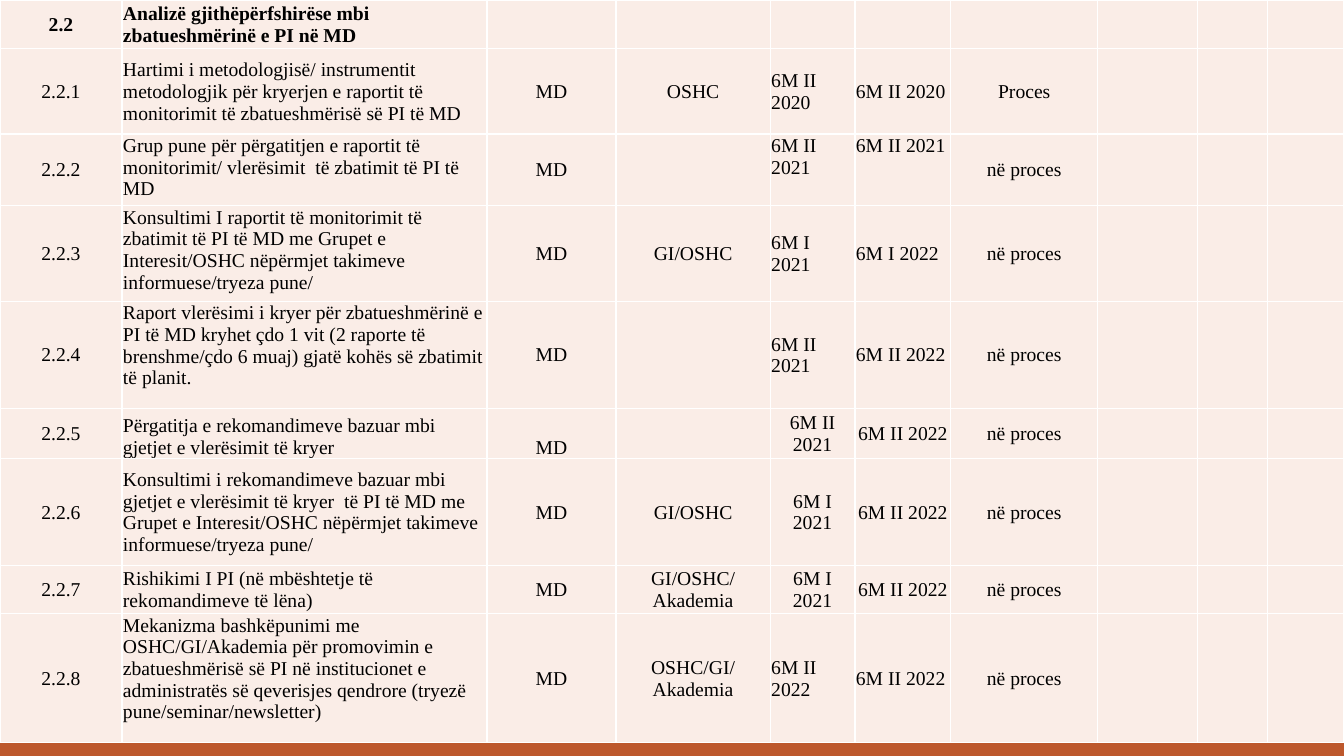
import pptx
import pptx.dml.color
import pptx.enum.shapes
import pptx.enum.text
import pptx.util
import lxml.etree

SLIDE_WIDTH, SLIDE_HEIGHT = 13.33, 7.5
COLUMN_WIDTHS = [1.21, 3.62, 1.28, 1.53, 0.84, 0.95, 1.46, 0.99, 0.69, 0.76]
ROW_HEIGHTS = [0.48, 0.85, 0.71, 0.95, 1.06, 0.5, 1.06, 0.48, 1.28]
ANCHORS = {
    "t": pptx.enum.text.MSO_ANCHOR.TOP,
    "m": pptx.enum.text.MSO_ANCHOR.MIDDLE,
    "b": pptx.enum.text.MSO_ANCHOR.BOTTOM,
}
ALIGNMENTS = {
    "l": pptx.enum.text.PP_ALIGN.LEFT,
    "c": pptx.enum.text.PP_ALIGN.CENTER,
}
LEFT_DATES, CENTRED_DATES = "clccllc", "clccccc"

ACTIVITIES = [
    ("mmmmmmm", LEFT_DATES,
     ["2.2", "Analizë gjithëpërfshirëse mbi zbatueshmërinë e PI në MD", "", "", "", "", ""]),
    ("mmmmmmm", LEFT_DATES,
     ["2.2.1", "Hartimi i metodologjisë/ instrumentit metodologjik për kryerjen e raportit të "
      "monitorimit të zbatueshmërisë së PI të MD",
      "MD", "OSHC", "6M II 2020", "6M II 2020", "Proces"]),
    ("mtmmttm", LEFT_DATES,
     ["2.2.2", "Grup pune për përgatitjen e raportit të monitorimit/ vlerësimit  të zbatimit "
      "të PI të MD",
      "MD", "", "6M II 2021", "6M II 2021", "në proces"]),
    ("mtmmmmm", LEFT_DATES,
     ["2.2.3", "Konsultimi I raportit të monitorimit të zbatimit të PI të MD me Grupet e "
      "Interesit/OSHC nëpërmjet takimeve informuese/tryeza pune/",
      "MD", "GI/OSHC", "6M I 2021", "6M I 2022", "në proces"]),
    ("mtmmmmm", LEFT_DATES,
     ["2.2.4", "Raport vlerësimi i kryer për zbatueshmërinë e PI të MD kryhet çdo 1 vit "
      "(2 raporte të brenshme/çdo 6 muaj) gjatë kohës së zbatimit të planit.",
      "MD", "", "6M II 2021", "6M II 2022", "në proces"]),
    ("mbbmmmm", CENTRED_DATES,
     ["2.2.5", "Përgatitja e rekomandimeve bazuar mbi gjetjet e vlerësimit të kryer",
      "MD", "", "6M II 2021", "6M II 2022", "në proces"]),
    ("mmmmmmm", CENTRED_DATES,
     ["2.2.6", "Konsultimi i rekomandimeve bazuar mbi gjetjet e vlerësimit të kryer  të PI të MD "
      "me Grupet e Interesit/OSHC nëpërmjet takimeve informuese/tryeza pune/",
      "MD", "GI/OSHC", "6M I 2021", "6M II 2022", "në proces"]),
    ("mmmmmmm", CENTRED_DATES,
     ["2.2.7", "Rishikimi I PI (në mbështetje të rekomandimeve të lëna)",
      "MD", "GI/OSHC/Akademia", "6M I 2021", "6M II 2022", "në proces"]),
    ("mtmmmmm", LEFT_DATES,
     ["2.2.8", "Mekanizma bashkëpunimi me OSHC/GI/Akademia për promovimin e zbatueshmërisë së PI "
      "në institucionet e administratës së qeverisjes qendrore (tryezë pune/seminar/newsletter)",
      "MD", "OSHC/GI/Akademia", "6M II 2022", "6M II 2022", "në proces"]),
]


def inches(*lengths):
    return [pptx.util.Inches(length) for length in lengths]


def paint(fill, color):
    fill.solid()
    fill.fore_color.rgb = pptx.dml.color.RGBColor.from_string(color)


def add_band(slide, box, color):
    shape = slide.shapes.add_shape(pptx.enum.shapes.MSO_SHAPE.RECTANGLE, *inches(*box))
    shape.shadow.inherit = False
    paint(shape.fill, color)
    shape.line.fill.background()


def add_footer(slide, left, top, width, height):
    stripe = 0.07
    add_band(slide, (left, top + stripe, width, height - stripe), "BD582C")
    add_band(slide, (left, top, width, stripe), "E48312")


def add_borders(cell, color):
    namespace = "http://schemas.openxmlformats.org/drawingml/2006/main"
    properties = cell._tc.get_or_add_tcPr()
    for side in ("lnL", "lnR", "lnT", "lnB"):
        line = lxml.etree.SubElement(properties, f"{{{namespace}}}{side}", w="12700")
        fill = lxml.etree.SubElement(line, f"{{{namespace}}}solidFill")
        lxml.etree.SubElement(fill, f"{{{namespace}}}srgbClr", val=color)


def style_cell(cell):
    add_borders(cell, "FFFFFF")
    paint(cell.fill, "FAEDE7")
    cell.margin_left, cell.margin_right, cell.margin_top, cell.margin_bottom = inches(
        0.01, 0.01, 0.01, 0)


def write_cell(cell, text, anchor, alignment, bold):
    cell.text = text
    cell.vertical_anchor = ANCHORS[anchor]
    paragraph = cell.text_frame.paragraphs[0]
    paragraph.alignment = ALIGNMENTS[alignment]
    font = paragraph.font
    font.name = "Times New Roman"
    font.size = pptx.util.Pt(14)
    font.bold = bold
    font.color.rgb = pptx.dml.color.RGBColor.from_string("000000")


def add_activity_table(slide, left, top, width, height):
    frame = slide.shapes.add_table(len(ROW_HEIGHTS), len(COLUMN_WIDTHS),
                                   *inches(left, top, width, height))
    table = frame.table
    table.first_row = table.horz_banding = False
    for column, share in zip(table.columns, COLUMN_WIDTHS):
        column.width = pptx.util.Inches(width * share / sum(COLUMN_WIDTHS))
    for row, share in zip(table.rows, ROW_HEIGHTS):
        row.height = pptx.util.Inches(height * share / sum(ROW_HEIGHTS))
    for cell in table.iter_cells():
        style_cell(cell)
    for row_index, (anchors, alignments, texts) in enumerate(ACTIVITIES):
        for column_index, (text, anchor, alignment) in enumerate(zip(texts, anchors, alignments)):
            if text:
                write_cell(table.cell(row_index, column_index), text, anchor, alignment,
                           row_index == 0)


def main():
    presentation = pptx.Presentation()
    presentation.slide_width, presentation.slide_height = inches(SLIDE_WIDTH, SLIDE_HEIGHT)
    slide = presentation.slides.add_slide(presentation.slide_layouts[6])
    add_footer(slide, 0, 6.93, SLIDE_WIDTH, SLIDE_HEIGHT - 6.93)
    add_activity_table(slide, 0, 0, SLIDE_WIDTH, 7.37)
    presentation.save("out.pptx")


if __name__ == "__main__":
    main()
